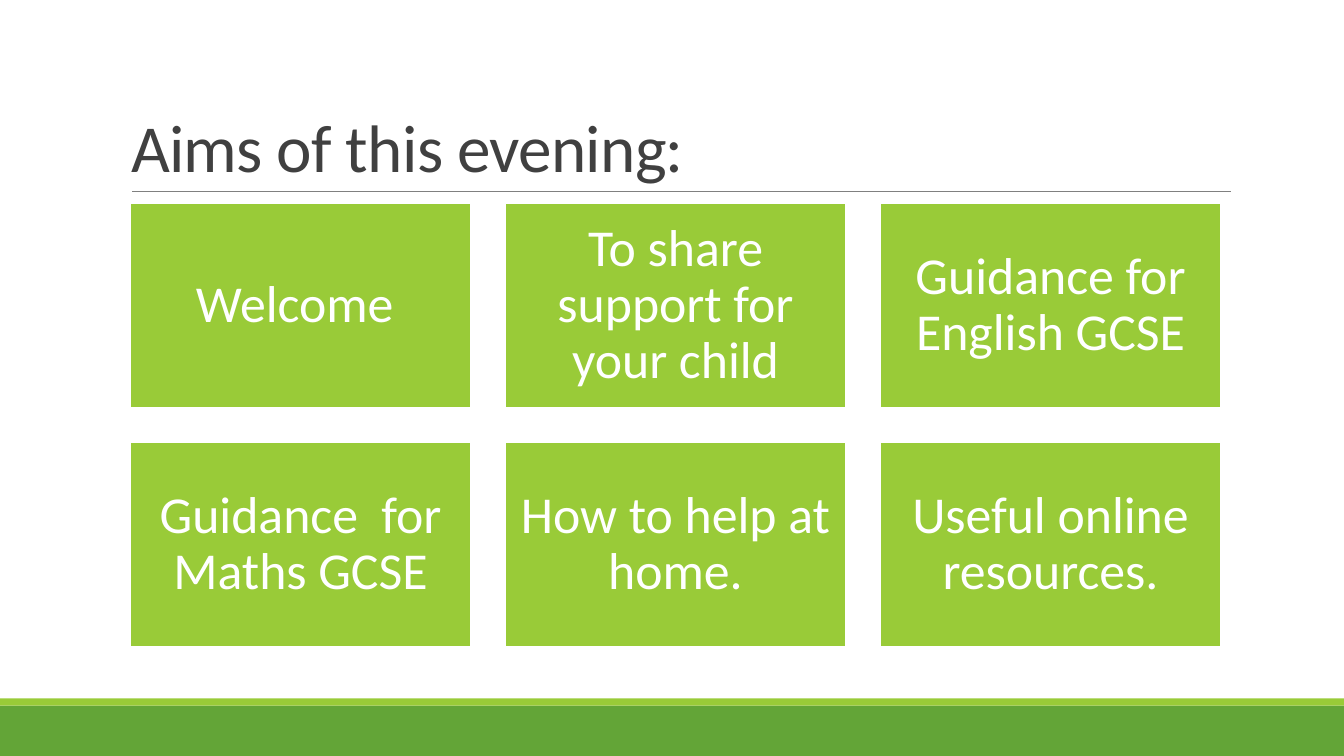
import pptx
import pptx.dml.color
import pptx.enum.shapes
import pptx.enum.text
import pptx.util
import lxml.etree
from pptx.util import Cm

LIME, GREEN, WHITE, GREY, DARK = "99CB38", "63A537", "FFFFFF", "808080", "404040"
SLIDE_WIDTH, SLIDE_HEIGHT = Cm(33.87), Cm(19.05)
AIMS = [
    "Welcome ",
    "To share support for your child",
    "Guidance for English GCSE",
    "Guidance  for Maths GCSE",
    "How to help at home.",
    "Useful online resources.",
]
COLUMNS = 3


def colour(hex_string):
    return pptx.dml.color.RGBColor.from_string(hex_string)


def set_all(target, values):
    for name, value in values.items():
        setattr(target, name, value)


def write_text(shape, text, size, text_colour, frame_format, para_format):
    frame = shape.text_frame
    set_all(frame, {"word_wrap": True, "auto_size": pptx.enum.text.MSO_AUTO_SIZE.NONE, **frame_format})
    para = frame.paragraphs[0]
    set_all(para, para_format)
    span = para.add_run()
    span.text = text
    set_all(span.font, {"name": "Calibri", "size": pptx.util.Pt(size)})
    span.font.color.rgb = colour(text_colour)
    return span


def add_block(page, left, top, width, height, fill):
    block = page.shapes.add_shape(pptx.enum.shapes.MSO_SHAPE.RECTANGLE, left, top, width, height)
    block.shadow.inherit = False
    block.fill.solid()
    block.fill.fore_color.rgb = colour(fill)
    block.line.fill.background()
    return block


def add_footer_bands(page, left, top, width, height):
    stripe = Cm(0.18)
    add_block(page, left, top + stripe, width, height - stripe, GREEN)
    add_block(page, left, top, width, stripe, LIME)


def add_heading(page, left, top, width, height):
    """Fill the title placeholder and rule a thin line along its lower edge."""
    title = page.shapes.title
    set_all(title, {"left": left, "top": top, "width": width, "height": height})
    span = write_text(
        title, "Aims of this evening:", 48, DARK,
        {"vertical_anchor": pptx.enum.text.MSO_ANCHOR.BOTTOM},
        {"alignment": pptx.enum.text.PP_ALIGN.LEFT, "line_spacing": 0.85},
    )
    span.font._element.set("spc", "-50")

    rule_left, rule_top = left + Cm(0.28), top + height
    rule = page.shapes.add_connector(
        pptx.enum.shapes.MSO_CONNECTOR.STRAIGHT,
        rule_left, rule_top, rule_left + Cm(27.69), rule_top,
    )
    rule.line.color.rgb = colour(GREY)
    rule.line.width = pptx.util.Pt(0.5)
    lxml.etree.SubElement(rule._element.spPr, pptx.oxml.ns.qn("a:effectLst"))


def add_aim_grid(page, left, top, width, height):
    gap, inset = Cm(0.86), Cm(0.36)
    rows = len(AIMS) // COLUMNS
    tile_width = (width - gap * (COLUMNS - 1)) // COLUMNS
    tile_height = (height - gap * (rows - 1)) // rows
    for index, aim in enumerate(AIMS):
        row, column = divmod(index, COLUMNS)
        tile = add_block(
            page, left + column * (tile_width + gap), top + row * (tile_height + gap),
            tile_width, tile_height, LIME,
        )
        tile.line.color.rgb = colour(WHITE)
        tile.line.width = pptx.util.Pt(1.25)
        margins = {f"margin_{side}": inset for side in ("left", "right", "top", "bottom")}
        write_text(
            tile, aim, 37, WHITE,
            {"vertical_anchor": pptx.enum.text.MSO_ANCHOR.MIDDLE, **margins},
            {"alignment": pptx.enum.text.PP_ALIGN.CENTER, "line_spacing": 0.9},
        )


def main():
    deck = pptx.Presentation()
    set_all(deck, {"slide_width": SLIDE_WIDTH, "slide_height": SLIDE_HEIGHT})
    page = deck.slides.add_slide(deck.slide_layouts[5])
    band_top = Cm(17.6)
    add_footer_bands(page, 0, band_top, SLIDE_WIDTH, SLIDE_HEIGHT - band_top)
    add_heading(page, Cm(3.05), Cm(0.79), Cm(27.94), Cm(4.03))
    add_aim_grid(page, Cm(3.28), Cm(5.13), Cm(27.49), Cm(11.18))
    deck.save("out.pptx")


if __name__ == "__main__":
    main()
